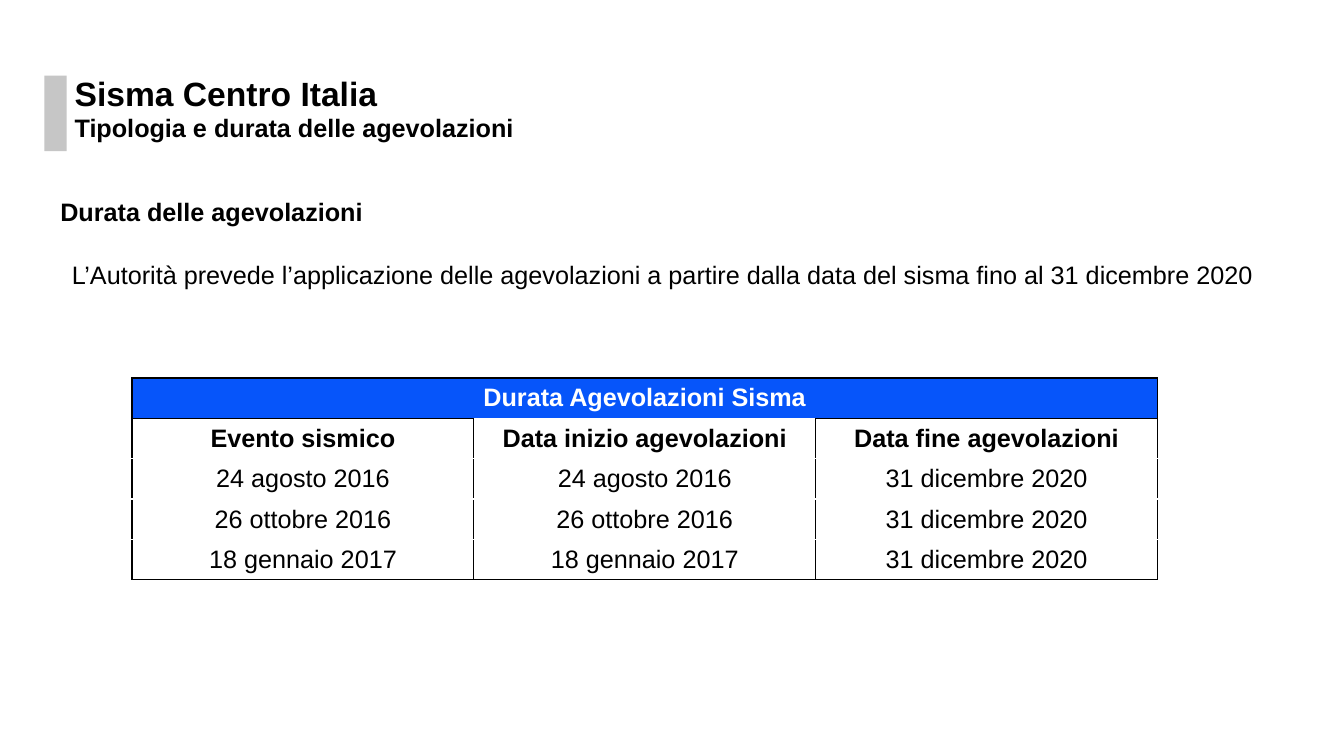
from pptx import Presentation
from pptx.dml.color import RGBColor
from pptx.enum.shapes import MSO_SHAPE
from pptx.enum.text import MSO_ANCHOR, MSO_AUTO_SIZE, PP_ALIGN
from pptx.oxml.xmlchemy import OxmlElement
from pptx.util import Inches, Pt

BLACK = RGBColor(0x00, 0x00, 0x00)
WHITE = RGBColor(0xFF, 0xFF, 0xFF)
BLUE = RGBColor(0x06, 0x55, 0xFA)
GREY = RGBColor(0xC6, 0xC6, 0xC6)

RECTANGLE = MSO_SHAPE.RECTANGLE
TOP = MSO_ANCHOR.TOP
MIDDLE = MSO_ANCHOR.MIDDLE
NO_AUTOFIT = MSO_AUTO_SIZE.NONE
LEFT = PP_ALIGN.LEFT
CENTER = PP_ALIGN.CENTER

TITLE_ONLY_LAYOUT = 5
NO_MARGINS = {"margin_left": 0, "margin_top": 0, "margin_right": 0, "margin_bottom": 0}
HEADING_FRAME = {"word_wrap": True, "auto_size": NO_AUTOFIT, "vertical_anchor": TOP, **NO_MARGINS}
HEADING_PARA = {"alignment": LEFT, "line_spacing": 0.9}

TABLE_TITLE = "Durata Agevolazioni Sisma"
TABLE_HEADERS = ["Evento sismico", "Data inizio agevolazioni", "Data fine agevolazioni"]
EVENT_DATES = ["24 agosto 2016", "26 ottobre 2016", "18 gennaio 2017"]
END_DATE = "31 dicembre 2020"


def set_format(target, values):
    for name, value in values.items():
        setattr(target, name, value)


def write(para, text, size=18, bold=True, color=BLACK, **para_format):
    set_format(para, para_format)
    span = para.add_run()
    span.text = text
    set_format(span.font, {"name": "Arial", "size": Pt(size), "bold": bold})
    span.font.color.rgb = color


def add_accent_bar(slide):
    bar = slide.shapes.add_shape(RECTANGLE, Inches(0.44), Inches(0.75), Inches(0.22), Inches(0.75))
    bar.shadow.inherit = False
    bar.fill.solid()
    bar.fill.fore_color.rgb = GREY
    bar.line.fill.background()


def add_headings(slide):
    """Fill the title placeholder and place the subtitle under it."""
    title = slide.shapes.title
    position = {"left": Inches(0.74), "top": Inches(0.77), "width": Inches(9.54), "height": Inches(0.43)}
    set_format(title, position)
    subtitle = slide.shapes.add_textbox(Inches(0.74), Inches(1.15), Inches(9.54), Inches(0.43))
    for box, text, size in [
        (title, "Sisma Centro Italia", 24),
        (subtitle, "Tipologia e durata delle agevolazioni", 18),
    ]:
        set_format(box.text_frame, HEADING_FRAME)
        write(box.text_frame.paragraphs[0], text, size, **HEADING_PARA)


def add_duration_text(slide):
    box = slide.shapes.add_textbox(Inches(0.5), Inches(1.9), Inches(12.14), Inches(1.3))
    frame = box.text_frame
    set_format(frame, {"word_wrap": True, "vertical_anchor": TOP})
    write(frame.paragraphs[0], "Durata delle agevolazioni")
    write(
        frame.add_paragraph(),
        "L’Autorità prevede l’applicazione delle agevolazioni a partire dalla data del sisma "
        "fino al 31 dicembre 2020",
        bold=False,
        alignment=CENTER,
        space_before=Pt(23),
    )


def set_borders(cell, top, bottom):
    """Draw black sides, with the given colours above and below."""
    properties = cell._tc.get_or_add_tcPr()
    for tag, color in {"a:lnL": BLACK, "a:lnR": BLACK, "a:lnT": top, "a:lnB": bottom}.items():
        line = OxmlElement(tag)
        line.set("w", str(Pt(1)))
        fill = OxmlElement("a:solidFill")
        value = OxmlElement("a:srgbClr")
        value.set("val", str(color))
        fill.append(value)
        line.append(fill)
        properties.append(line)


def border_colors(row, column, last_row):
    if row == 0:
        return BLACK, BLACK
    top = BLACK if row == 1 and column != 1 else WHITE
    bottom = BLACK if row == last_row else WHITE
    return top, bottom


def add_duration_table(slide):
    rows = [[TABLE_TITLE, "", ""], TABLE_HEADERS]
    rows += [[date, date, END_DATE] for date in EVENT_DATES]
    frame = slide.shapes.add_table(
        len(rows), len(TABLE_HEADERS), Inches(1.31), Inches(3.75), Inches(10.17), Inches(2)
    )
    table = frame.table
    set_format(table, {"first_row": False, "horz_banding": False})
    for row, texts in enumerate(rows):
        for column, text in enumerate(texts):
            cell = table.cell(row, column)
            set_borders(cell, *border_colors(row, column, len(rows) - 1))
            cell.fill.solid()
            cell.fill.fore_color.rgb = BLUE if row == 0 else WHITE
            cell.vertical_anchor = MIDDLE
            if text:
                color = WHITE if row == 0 else BLACK
                write(cell.text_frame.paragraphs[0], text, bold=row < 2, color=color, alignment=CENTER)
    table.cell(0, 0).merge(table.cell(0, len(TABLE_HEADERS) - 1))


def main():
    deck = Presentation()
    set_format(deck, {"slide_width": Inches(13.33), "slide_height": Inches(7.5)})
    slide = deck.slides.add_slide(deck.slide_layouts[TITLE_ONLY_LAYOUT])
    add_accent_bar(slide)
    add_headings(slide)
    add_duration_text(slide)
    add_duration_table(slide)
    deck.save("out.pptx")


if __name__ == "__main__":
    main()
